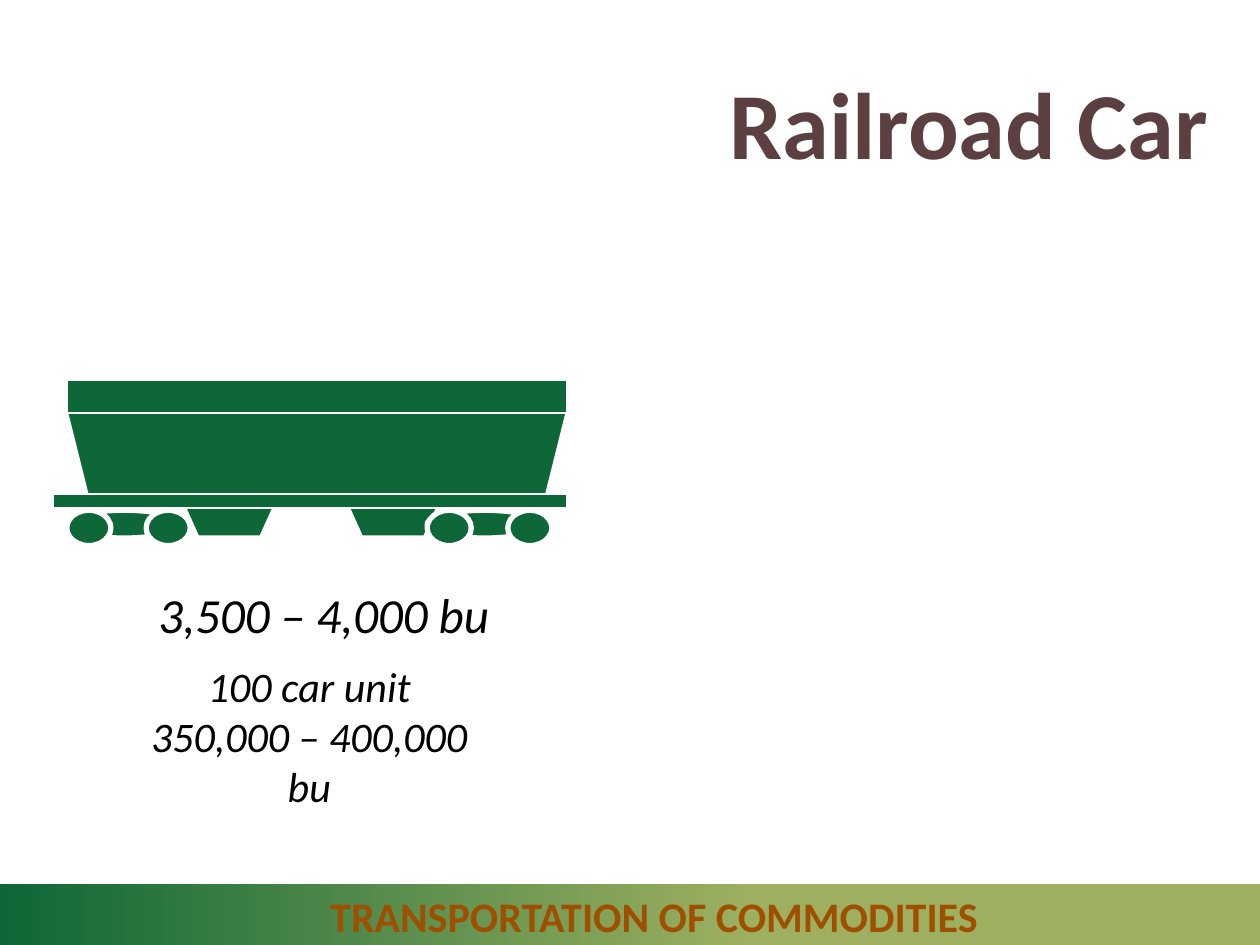
"""Build the Railroad Car slide: a hopper car, its capacity and a footer band."""
from pptx import Presentation
from pptx.dml.color import RGBColor
from pptx.enum.shapes import MSO_SHAPE as Shape
from pptx.enum.text import MSO_ANCHOR as Anchor, MSO_AUTO_SIZE as AutoSize, PP_ALIGN as Align
from pptx.util import Inches, Pt

GREEN, OLIVE, WHITE, BLACK = "0D6737", "9EB060", "FFFFFF", "000000"
BROWN, RUST = "5C4041", "9E4F00"

presentation = Presentation()
presentation.slide_width, presentation.slide_height = Inches(10), Inches(7.5)
column = presentation.slide_width / 100
row = presentation.slide_height / 75
slide = presentation.slides.add_slide(presentation.slide_layouts[5])


def add_part(kind, left, top, width, height, outline=0):
    """Add a green car part, measured in columns and rows."""
    part = slide.shapes.add_shape(
        kind, int(left * column), int(top * row), int(width * column), int(height * row))
    part.shadow.inherit = False
    part.fill.solid()
    part.fill.fore_color.rgb = RGBColor.from_string(GREEN)
    if outline:
        part.line.color.rgb = RGBColor.from_string(WHITE)
        part.line.width = Pt(outline)
    else:
        part.line.fill.background()
    if kind == Shape.TRAPEZOID:
        part._element.spPr.xfrm.set("flipV", "1")
    return part


def write(shape, text, size, color, align, bold=False, italic=False):
    """Fill a shape with text and format its runs."""
    shape.text_frame.text = text
    for paragraph in shape.text_frame.paragraphs:
        paragraph.alignment = align
        for run in paragraph.runs:
            run.font.name, run.font.size = "Calibri", Pt(size)
            run.font.bold, run.font.italic = bold, italic
            run.font.color.rgb = RGBColor.from_string(color)


title = slide.shapes.title
title.left, title.top = int(12.8 * column), int(3.4 * row)
title.width, title.height = int(84.1 * column), int(12.5 * row)
write(title, "Railroad Car", 54, BROWN, Align.RIGHT, bold=True)
title.text_frame.vertical_anchor = Anchor.MIDDLE
title.text_frame.auto_size = AutoSize.NONE

add_part(Shape.TRAPEZOID, 5.3, 32.7, 39.7, 7.7, 1.5)
for hopper_left, axle_left, wheel_lefts in (
        (27.4, 33.9, (33.9, 40.3)), (14.4, 5.3, (5.3, 11.6))):
    hopper = add_part(Shape.TRAPEZOID, hopper_left, 39.4, 7.6, 3.1)
    hopper.adjustments[0] = 0.45
    add_part(Shape.OVAL, axle_left, 40.5, 9.1, 2.2, 3)
    for wheel_left in wheel_lefts:
        add_part(Shape.OVAL, wheel_left, 40.5, 3.5, 2.8, 3)
add_part(Shape.RECTANGLE, 4.2, 39.2, 40.8, 1.1, 1)
add_part(Shape.RECTANGLE, 5.3, 30.1, 39.7, 2.7, 1.5)

for text, size, align, wrap, left, top, width, height in (
        ("3,500 – 4,000 bu", 28, Align.LEFT, False, 11.6, 45.9, 28.6, 5.7),
        ("100 car unit\n350,000 – 400,000 bu", 24, Align.CENTER, True, 9, 51.9, 31.1, 9.1)):
    caption = slide.shapes.add_textbox(
        int(left * column), int(top * row), int(width * column), int(height * row))
    write(caption, text, size, BLACK, align, italic=True)
    caption.text_frame.word_wrap = wrap
    caption.text_frame.auto_size = AutoSize.SHAPE_TO_FIT_TEXT

footer = add_part(Shape.RECTANGLE, 0, 70.2, 101.6, 5)
footer.fill.gradient()
footer.fill.gradient_angle = 0
for stop, position, color in zip(footer.fill.gradient_stops, (0, 0.59), (GREEN, OLIVE)):
    stop.position = position
    stop.color.rgb = RGBColor.from_string(color)
write(footer, "TRANSPORTATION OF COMMODITIES", 24, RUST, Align.CENTER, bold=True)
footer.text_frame.margin_left = int(3.2 * column)
footer.text_frame.word_wrap = True
footer.text_frame.vertical_anchor = Anchor.TOP

presentation.save("out.pptx")
